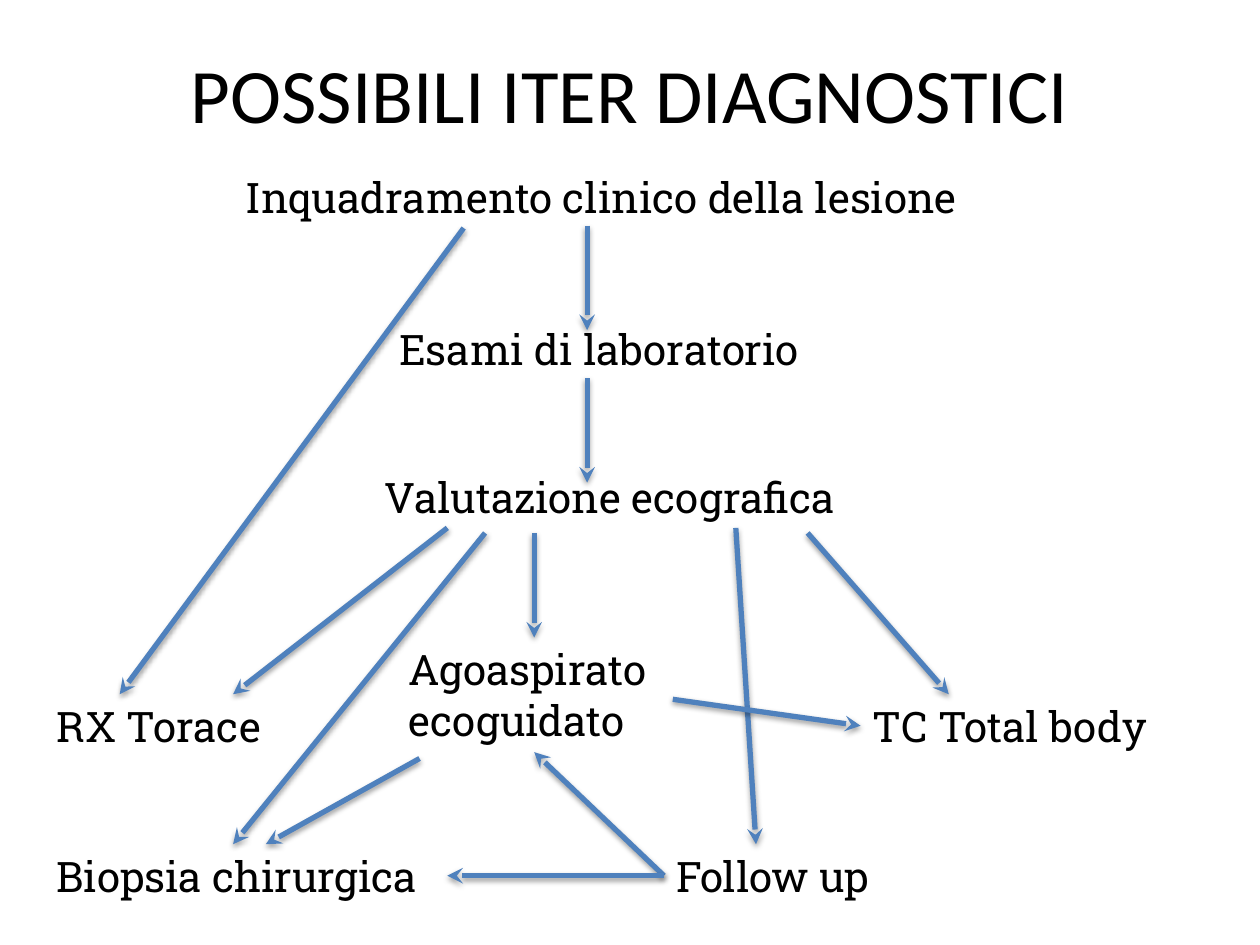
import pptx
import pptx.util
import lxml.etree
from dataclasses import dataclass
from pptx.dml.color import RGBColor
from pptx.enum.shapes import MSO_CONNECTOR
from pptx.enum.text import MSO_ANCHOR, PP_ALIGN
from pptx.oxml import parse_xml
from pptx.oxml.ns import nsdecls, qn
from pptx.util import Inches, Pt

BLACK = RGBColor(0x00, 0x00, 0x00)
BLUE = RGBColor(0x4F, 0x81, 0xBD)

SHADOW = (
    f'<a:effectLst {nsdecls("a")}>'
    '<a:outerShdw blurRad="40000" dist="20000" dir="5400000" rotWithShape="0">'
    '<a:srgbClr val="000000"><a:alpha val="38000"/></a:srgbClr>'
    '</a:outerShdw></a:effectLst>'
)


@dataclass
class Step:
    text: str
    left: float
    top: float
    width: float
    height: float = 0.5


@dataclass
class Arrow:
    x1: float
    y1: float
    x2: float
    y2: float


TITLE = Step("POSSIBILI ITER DIAGNOSTICI", 0.5, 0.3, 9, 0.87)

STEPS = [
    Step("Inquadramento clinico della lesione", 1.85, 1.31, 6.02),
    Step("Esami di laboratorio", 3.07, 2.52, 3.54),
    Step("Valutazione ecografica", 2.95, 3.69, 3.94),
    Step("RX Torace", 0.35, 5.51, 1.93),
    Step("TC Total body", 6.83, 5.51, 2.53),
    Step("Follow up", 5.27, 6.7, 1.85),
    Step("Agoaspirato ecoguidato", 3.14, 5.06, 2.2, 0.91),
    Step("Biopsia chirurgica", 0.35, 6.7, 3.2),
]

ARROWS = [
    # From the clinical assessment and the laboratory tests
    Arrow(4.66, 1.79, 4.66, 2.62),
    Arrow(4.66, 3, 4.66, 3.83),
    Arrow(3.68, 1.81, 0.95, 5.51),
    # From the ultrasound
    Arrow(4.24, 4.23, 4.24, 5.06),
    Arrow(5.84, 4.19, 6, 6.7),
    Arrow(6.41, 4.23, 7.53, 5.51),
    Arrow(3.55, 4.19, 1.85, 5.51),
    Arrow(3.85, 4.23, 1.85, 6.7),
    # From the follow-up
    Arrow(5.27, 6.95, 4.24, 5.97),
    Arrow(5.27, 6.95, 3.55, 6.95),
    # From the needle aspiration
    Arrow(5.34, 5.55, 6.83, 5.76),
    Arrow(3.33, 6.02, 2.11, 6.7),
]


def add_text(s: pptx.slide.Slide, step: Step, font: str, size: float,
             align: PP_ALIGN = PP_ALIGN.LEFT,
             anchor: MSO_ANCHOR = MSO_ANCHOR.TOP) -> None:
    sp = s.shapes.add_textbox(Inches(step.left), Inches(step.top),
                              Inches(step.width), Inches(step.height))
    tf = sp.text_frame
    tf.word_wrap = True
    tf.vertical_anchor = anchor
    p = tf.paragraphs[0]
    p.alignment = align
    r = p.add_run()
    r.text = step.text
    r.font.name = font
    r.font.size = Pt(size)
    r.font.color.rgb = BLACK


def add_arrow(s: pptx.slide.Slide, arrow: Arrow) -> None:
    sp = s.shapes.add_connector(MSO_CONNECTOR.STRAIGHT,
                                Inches(arrow.x1), Inches(arrow.y1),
                                Inches(arrow.x2), Inches(arrow.y2))
    sp.line.color.rgb = BLUE
    sp.line.width = Pt(3)
    ln = sp.line._get_or_add_ln()
    lxml.etree.SubElement(ln, qn("a:tailEnd"), type="stealth")
    ln.addnext(parse_xml(SHADOW))


def main() -> None:
    prs = pptx.Presentation()
    prs.slide_width, prs.slide_height = Inches(10), Inches(7.5)
    s = prs.slides.add_slide(prs.slide_layouts[6])

    # Title
    add_text(s, TITLE, "Calibri", 44, PP_ALIGN.CENTER, MSO_ANCHOR.MIDDLE)

    # Diagnostic steps
    for step in STEPS:
        add_text(s, step, "Roboto Slab", 24)

    # Paths between the steps
    for arrow in ARROWS:
        add_arrow(s, arrow)

    prs.save("out.pptx")


if __name__ == "__main__":
    main()
